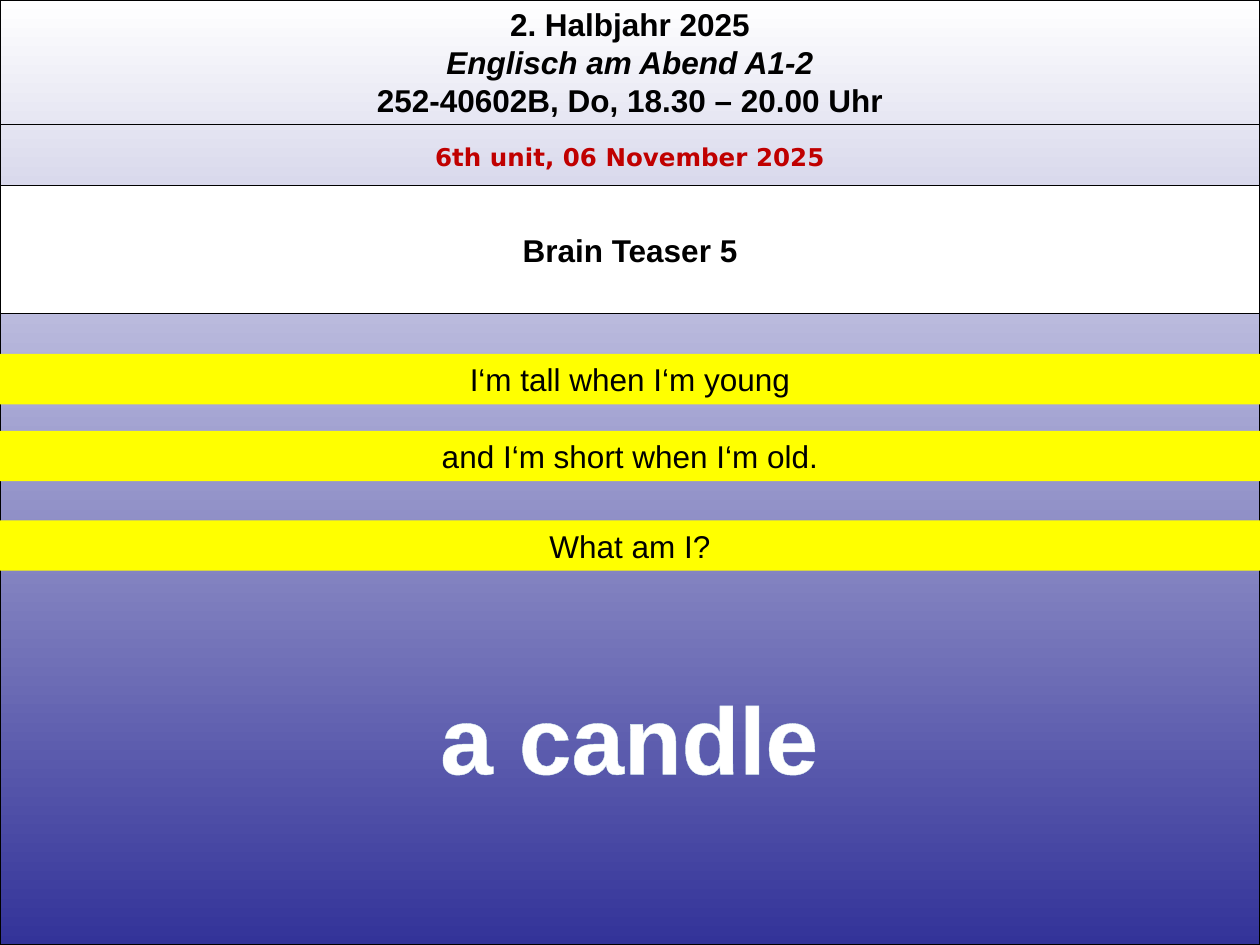
from lxml.etree import SubElement
from pptx import Presentation
from pptx.dml.color import RGBColor
from pptx.enum.shapes import MSO_CONNECTOR, MSO_SHAPE
from pptx.enum.text import MSO_ANCHOR, PP_ALIGN
from pptx.oxml.ns import qn
from pptx.util import Inches, Pt

BLACK = RGBColor(0x00, 0x00, 0x00)
WHITE = RGBColor(0xFF, 0xFF, 0xFF)
INDIGO = RGBColor(0x33, 0x33, 0x99)
RED = RGBColor(0xC0, 0x00, 0x00)
YELLOW = RGBColor(0xFF, 0xFF, 0x00)
PALE_BLUE = RGBColor(0xDA, 0xED, 0xEF)

WIDTH, HEIGHT = Inches(10), Inches(7.5)
COURSE = ["2. Halbjahr 2025", "Englisch am Abend A1-2", "252-40602B, Do, 18.30 – 20.00 Uhr"]
UNIT = "6th unit, 06 November 2025"
TITLE = "Brain Teaser 5"
RIDDLE = [
    (2.81, "I‘m tall when I‘m young"),
    (3.42, "and I‘m short when I‘m old."),
    (4.13, "What am I?"),
]
ANSWER = "a candle"


def place(shape, top, height):
    """Stretch a shape across the slide at the given top and height in inches."""
    shape.left, shape.top = 0, Inches(top)
    shape.width, shape.height = WIDTH, Inches(height)


def write(shape, lines, size=18, color=BLACK, bold=True, font="Arial"):
    """Write centred lines of text into a shape."""
    frame = shape.text_frame
    frame.text = "\n".join(lines)
    frame.word_wrap = True
    frame.vertical_anchor = MSO_ANCHOR.MIDDLE
    for paragraph in frame.paragraphs:
        paragraph.alignment = PP_ALIGN.CENTER
        for run in paragraph.runs:
            run.font.name, run.font.size, run.font.bold = font, Pt(size), bold
            run.font.color.rgb = color


def add_band(slide, top, height):
    """Add a full-width rectangle without shadow."""
    band = slide.shapes.add_shape(MSO_SHAPE.RECTANGLE, 0, 0, WIDTH, HEIGHT)
    place(band, top, height)
    band.shadow.inherit = False
    return band


def add_text(slide, top, height, lines, **style):
    """Add a full-width text box."""
    box = slide.shapes.add_textbox(0, 0, WIDTH, HEIGHT)
    place(box, top, height)
    write(box, lines, **style)
    return box


def outline_text(run, color, points):
    """Draw a thin outline around the letters of a run."""
    properties = run.font._element
    line = SubElement(properties, qn("a:ln"), w=str(Pt(points)))
    fill = SubElement(line, qn("a:solidFill"))
    SubElement(fill, qn("a:srgbClr"), val=str(color))
    properties.insert(0, line)


def main():
    """Build the brain teaser slide."""
    presentation = Presentation()
    presentation.slide_width, presentation.slide_height = WIDTH, HEIGHT
    slide = presentation.slides.add_slide(presentation.slide_layouts[5])

    backdrop = add_band(slide, 0, 7.5)
    backdrop.fill.gradient()
    backdrop.fill.gradient_angle = 270
    for stop, color in zip(backdrop.fill.gradient_stops, (WHITE, INDIGO)):
        stop.color.rgb = color

    header = add_text(slide, -0.01, 1, COURSE)
    header.text_frame.paragraphs[1].runs[0].font.italic = True

    rule = slide.shapes.add_connector(MSO_CONNECTOR.STRAIGHT, 0, Inches(0.99), WIDTH, Inches(0.99))
    SubElement(rule._element.spPr, qn("a:effectLst"))

    title = slide.shapes.title
    place(title, 1.47, 1.02)
    write(title, [TITLE])
    title.fill.solid()
    title.fill.fore_color.rgb = WHITE
    slide.shapes._spTree.append(title._element)

    for shape in (backdrop, rule, title):
        shape.line.color.rgb = BLACK
        shape.line.width = Pt(0.75)

    add_text(slide, 1.07, 0.34, [UNIT], size=14, color=RED, font="DejaVu Sans")

    for top, text in RIDDLE:
        band = add_band(slide, top, 0.4)
        band.fill.solid()
        band.fill.fore_color.rgb = YELLOW
        band.line.fill.background()
        write(band, [text], bold=False)

    answer = add_text(slide, 5.34, 1.01, [ANSWER], size=54, color=WHITE)
    answer.left, answer.width = Inches(3.38), Inches(3.23)
    answer.text_frame.word_wrap = False
    outline_text(answer.text_frame.paragraphs[0].runs[0], PALE_BLUE, 0.8)

    presentation.save("out.pptx")


if __name__ == "__main__":
    main()
